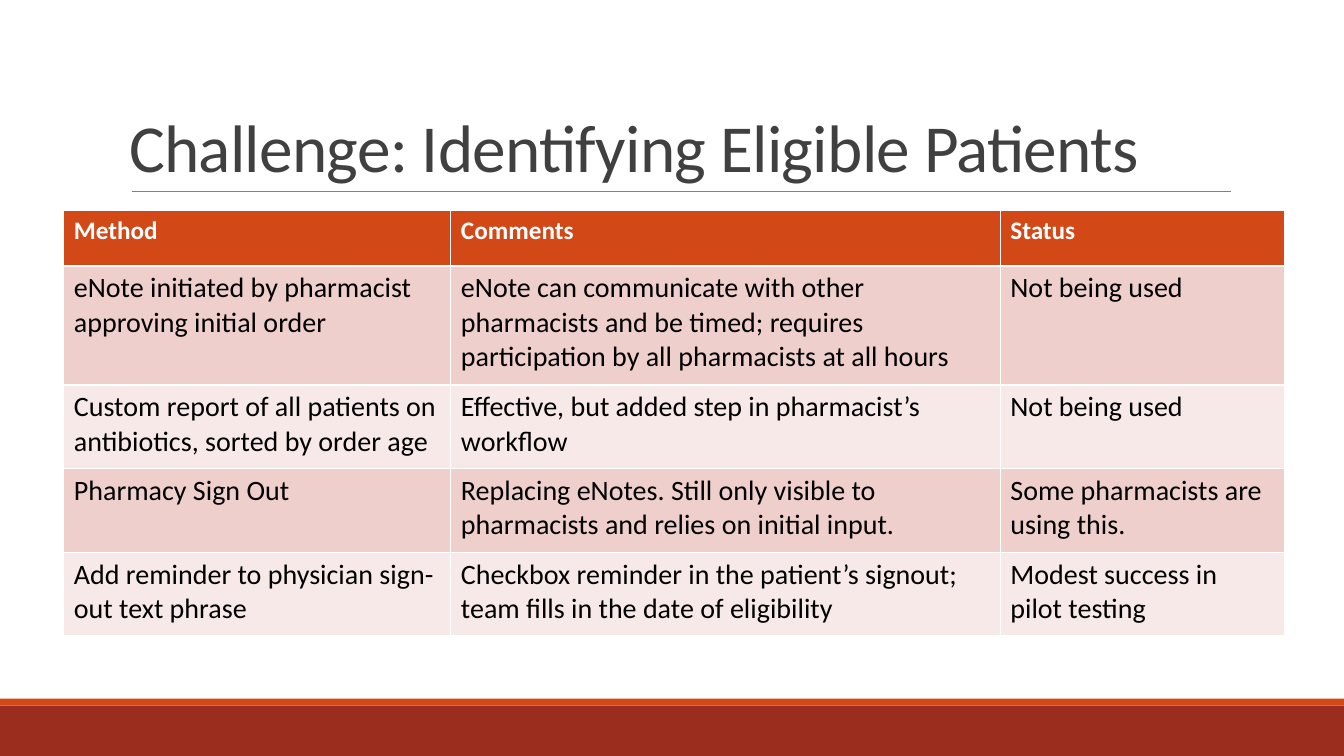
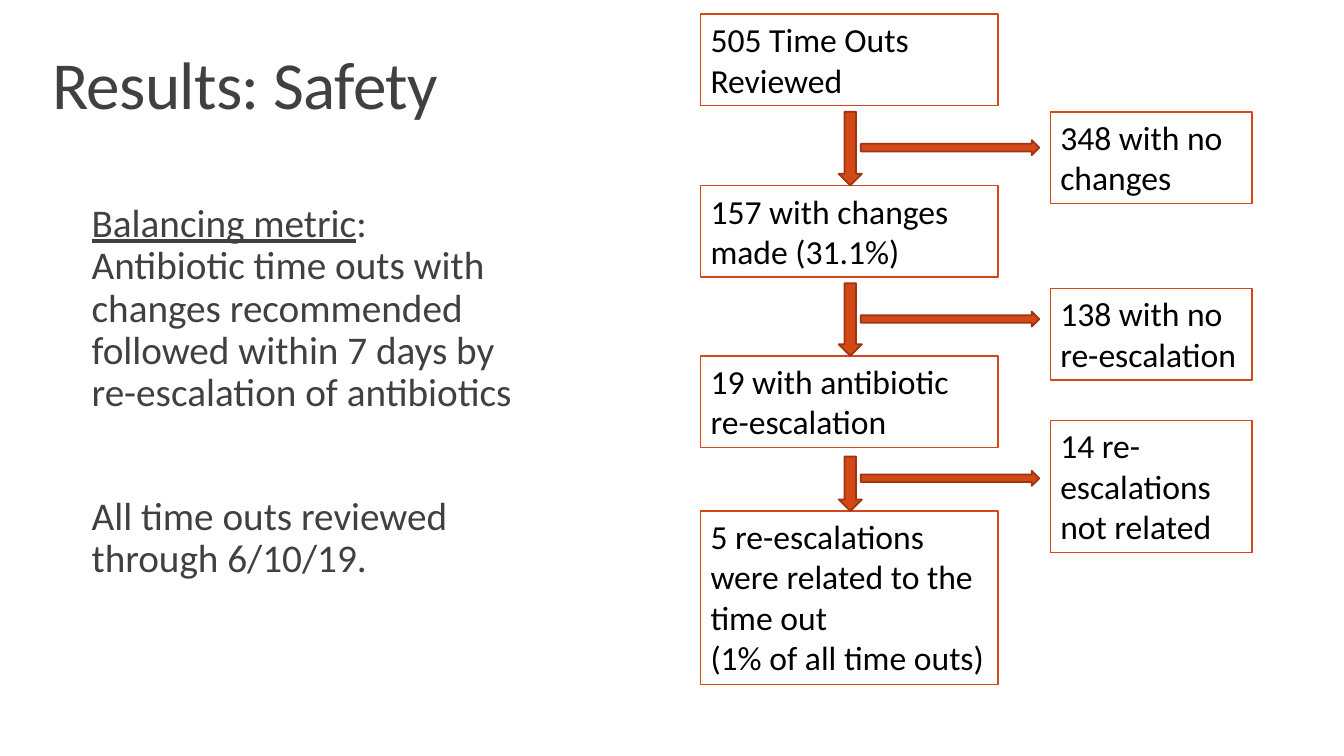
from lxml.etree import SubElement
from pptx import Presentation
from pptx.dml.color import RGBColor
from pptx.enum.shapes import MSO_CONNECTOR, MSO_SHAPE
from pptx.enum.text import MSO_ANCHOR, MSO_AUTO_SIZE, PP_ALIGN
from pptx.oxml.ns import qn
from pptx.util import Inches, Pt

ORANGE = RGBColor(0xD3, 0x48, 0x17)
DARK_ORANGE = RGBColor(0x9C, 0x35, 0x11)
BRICK = RGBColor(0x9B, 0x2D, 0x1F)
ROSE = RGBColor(0xEF, 0xCF, 0xCC)
PALE_ROSE = RGBColor(0xF7, 0xE9, 0xE8)
GRAY = RGBColor(0x80, 0x80, 0x80)
CHARCOAL = RGBColor(0x40, 0x40, 0x40)
BLACK = RGBColor(0, 0, 0)
WHITE = RGBColor(0xFF, 0xFF, 0xFF)

presentation = Presentation()
presentation.slide_width = Inches(13.33)
presentation.slide_height = Inches(7.5)
COLUMN = presentation.slide_width / 100
ROW = presentation.slide_height / 100


def area(left, top, width, height):
    return [round(left * COLUMN), round(top * ROW), round(width * COLUMN), round(height * ROW)]


def write(paragraph, text, size=24, color=BLACK, bold=False, underline=False, tracking=0):
    run = paragraph.add_run()
    run.text = text
    font = run.font
    font.name = "Calibri"
    font.size = Pt(size)
    font.bold = bold
    font.underline = underline
    font.color.rgb = color
    if tracking:
        font._element.set("spc", str(tracking))


titles = [
    ("Challenge: Identifying Eligible Patients", area(8.85, 4.13, 82.5, 21.2)),
    ("Results: Safety", area(3.15, 2.67, 82.5, 14.27)),
]
for text, place in titles:
    slide = presentation.slides.add_slide(presentation.slide_layouts[5])
    title = slide.shapes.title
    title.left, title.top, title.width, title.height = place
    frame = title.text_frame
    frame.auto_size = MSO_AUTO_SIZE.NONE
    frame.vertical_anchor = MSO_ANCHOR.BOTTOM
    paragraph = frame.paragraphs[0]
    paragraph.alignment = PP_ALIGN.LEFT
    paragraph.line_spacing = 0.85
    write(paragraph, text, size=48, color=CHARCOAL, tracking=-50)

challenge_slide, safety_slide = presentation.slides

for top, height, color in [(93.33, 6.67, BRICK), (92.4, 0.93, ORANGE)]:
    band = challenge_slide.shapes.add_shape(MSO_SHAPE.RECTANGLE, *area(0, top, 100, height))
    band.shadow.inherit = False
    band.fill.solid()
    band.fill.fore_color.rgb = color
    band.line.fill.background()

start_x, line_y, end_x, _ = area(9.82, 25.33, 91.58, 0)
title_rule = challenge_slide.shapes.add_connector(
    MSO_CONNECTOR.STRAIGHT, start_x, line_y, end_x, line_y)
title_rule.line.color.rgb = GRAY
title_rule.line.width = Pt(0.5)
SubElement(title_rule._element.spPr, qn("a:effectLst"))

methods = [
    ("Method", "Comments", "Status"),
    ("eNote initiated by pharmacist approving initial order",
     "eNote can communicate with other pharmacists and be timed; "
     "requires participation by all pharmacists at all hours",
     "Not being used"),
    ("Custom report of all patients on antibiotics, sorted by order age",
     "Effective, but added step in pharmacist’s workflow",
     "Not being used"),
    ("Pharmacy Sign Out",
     "Replacing eNotes. Still only visible to pharmacists and relies on initial input.",
     "Some pharmacists are using this."),
    ("Add reminder to physician sign-out text phrase",
     "Checkbox reminder in the patient’s signout; team fills in the date of eligibility",
     "Modest success in pilot testing"),
]
table = challenge_slide.shapes.add_table(
    len(methods), 3, *area(4.75, 27.87, 90.83, 56.27)).table
for column, share in zip(table.columns, [28.8, 40.88, 21.15]):
    column.width = round(share * COLUMN)
for row, share in zip(table.rows, [7.33, 15.73, 11.07, 11.07, 11.07]):
    row.height = round(share * ROW)
for row_index, texts in enumerate(methods):
    header = row_index == 0
    fill_color = ORANGE if header else ROSE if row_index % 2 else PALE_ROSE
    for column_index, text in enumerate(texts):
        cell = table.cell(row_index, column_index)
        cell.fill.solid()
        cell.fill.fore_color.rgb = fill_color
        write(cell.text_frame.paragraphs[0], text, size=18 if header else 20,
              color=WHITE if header else BLACK, bold=header)

metric = safety_slide.shapes.add_textbox(*area(6.08, 26.27, 32.78, 58.67))
frame = metric.text_frame
frame.word_wrap = True
frame.margin_right = 0
definition = frame.paragraphs[0]
period = frame.add_paragraph()
period.space_before = Pt(58)
for paragraph in (definition, period):
    paragraph.line_spacing = 0.9
write(definition, "Balancing metric", size=28, color=CHARCOAL, underline=True)
write(definition, ": Antibiotic time outs with changes recommended followed within 7 days "
      "by re-escalation of antibiotics", size=28, color=CHARCOAL)
write(period, "All time outs reviewed through 6/10/19.", size=28, color=CHARCOAL)

MAIN, SIDE = (52.13, 22.13), (78.15, 15)
TWO_LINES, THREE_LINES, FOUR_LINES = 12.13, 17.47, 22.93
boxes = [
    (MAIN, 1.87, TWO_LINES, "505 Time Outs Reviewed"),
    (MAIN, 24.53, TWO_LINES, "157 with changes made (31.1%)"),
    (MAIN, 47.07, TWO_LINES, "19 with antibiotic re-escalation"),
    (MAIN, 67.6, FOUR_LINES,
     "5 re-escalations were related to the time out\n(1% of all time outs)"),
    (SIDE, 14.8, TWO_LINES, "348 with no changes"),
    (SIDE, 38.13, TWO_LINES, "138 with no re-escalation"),
    (SIDE, 55.6, THREE_LINES, "14 re-escalations not related"),
]
for (left, width), top, height, text in boxes:
    box = safety_slide.shapes.add_textbox(*area(left, top, width, height))
    box.line.color.rgb = ORANGE
    box.line.width = Pt(1)
    frame = box.text_frame
    frame.word_wrap = True
    for index, line in enumerate(text.split("\n")):
        write(frame.add_paragraph() if index else frame.paragraphs[0], line)

arrows = []
for top, bottom, branch_top in [(14.8, 24.53, 18.53), (37.47, 47.07, 41.2), (60.4, 67.6, 62.27)]:
    arrows.append((MSO_SHAPE.DOWN_ARROW, area(62.4, top, 1.73, bottom - top)))
    arrows.append((MSO_SHAPE.RIGHT_ARROW, area(64.05, branch_top, 13.28, 2)))
for kind, place in arrows:
    arrow = safety_slide.shapes.add_shape(kind, *place)
    arrow.shadow.inherit = False
    arrow.fill.solid()
    arrow.fill.fore_color.rgb = ORANGE
    arrow.line.color.rgb = DARK_ORANGE
    arrow.line.width = Pt(1.25)

presentation.save("out.pptx")
